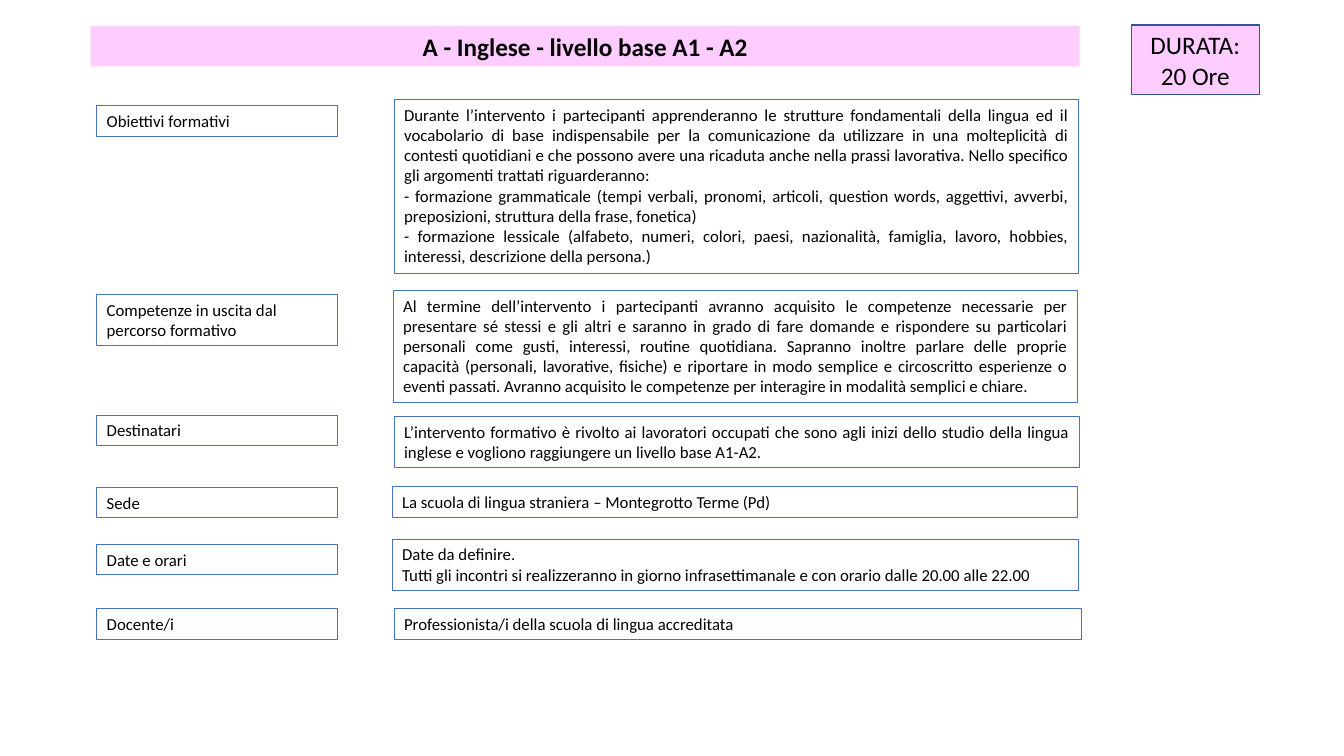
import dataclasses

import pptx
import pptx.dml.color
import pptx.enum.text
import pptx.enum.shapes
import pptx.util

PINK = pptx.dml.color.RGBColor(0xFF, 0xCC, 0xFF)
BLUE = pptx.dml.color.RGBColor(0x44, 0x72, 0xC4)
DARK_BLUE = pptx.dml.color.RGBColor(0x32, 0x54, 0x91)
BLACK = pptx.dml.color.RGBColor(0, 0, 0)
ALIGN = pptx.enum.text.PP_ALIGN
ANCHOR = pptx.enum.text.MSO_ANCHOR

SLIDE_WIDTH = pptx.util.Inches(13.33)
SLIDE_HEIGHT = pptx.util.Inches(7.5)
COLUMN = SLIDE_WIDTH / 100
ROW = SLIDE_HEIGHT / 100
LINE_ROWS = 2.7
PADDING_ROWS = 1.33
LABEL_LEFT = 7.2
LABEL_COLUMNS = 17.93


@dataclasses.dataclass
class Box:
    left: float
    top: float
    width: float
    height: float


@dataclasses.dataclass
class Section:
    label: str
    label_lines: int
    label_drop: float
    body: str
    body_lines: int
    body_left: float
    box_top: float
    box_width: float
    alignment: ALIGN = ALIGN.JUSTIFY


SECTIONS = [
    Section(
        "Obiettivi formativi", 1, 0.8,
        "Durante l’intervento i partecipanti apprenderanno le strutture fondamentali della lingua "
        "ed il vocabolario di base indispensabile per la comunicazione da utilizzare in una "
        "molteplicità di contesti quotidiani e che possono avere una ricaduta anche nella prassi "
        "lavorativa. Nello specifico gli argomenti trattati riguarderanno:\n"
        "- formazione grammaticale (tempi verbali, pronomi, articoli, question words, aggettivi, "
        "avverbi, preposizioni, struttura della frase, fonetica)\n"
        "- formazione lessicale (alfabeto, numeri, colori, paesi, nazionalità, famiglia, lavoro, "
        "hobbies, interessi, descrizione della persona.)",
        8, 22.13, 13.2, 73.07),
    Section(
        "Competenze in uscita dal percorso formativo", 2, 0.53,
        "Al termine dell’intervento i partecipanti avranno acquisito le competenze necessarie per "
        "presentare sé stessi e gli altri e saranno in grado di fare domande e rispondere su "
        "particolari personali come gusti, interessi, routine quotidiana. Sapranno inoltre parlare "
        "delle proprie capacità (personali, lavorative, fisiche) e riportare in modo semplice e "
        "circoscritto esperienze o eventi passati. Avranno acquisito le competenze per interagire "
        "in modalità semplici e chiare.",
        5, 22.06, 38.4, 73),
    Section(
        "Destinatari", 1, -0.14,
        "L’intervento formativo è rivolto ai lavoratori occupati che sono agli inizi dello studio "
        "della lingua inglese e vogliono raggiungere un livello base A1-A2.",
        2, 22.13, 55.07, 73.14),
    Section(
        "Sede", 1, 0.07,
        "La scuola di lingua straniera – Montegrotto Terme (Pd)",
        1, 21.98, 64.4, 73, ALIGN.LEFT),
    Section(
        "Date e orari", 1, 0.67,
        "Date da definire.\n"
        "Tutti gli incontri si realizzeranno in giorno infrasettimanale e con orario "
        "dalle 20.00 alle 22.00",
        2, 21.98, 71.33, 73.07, ALIGN.LEFT),
    Section(
        "Docente/i", 1, 0,
        "Professionista/i della scuola di lingua accreditata",
        1, 22.13, 80.53, 73.29, ALIGN.LEFT),
]


def text_rows(lines):
    return PADDING_ROWS + LINE_ROWS * lines


def place(shape, box):
    shape.left = round(box.left * COLUMN)
    shape.top = round(box.top * ROW)
    shape.width = round(box.width * COLUMN)
    shape.height = round(box.height * ROW)


def write(shape, text, size, alignment, anchor, bold=False):
    text_frame = shape.text_frame
    text_frame.text = text
    text_frame.word_wrap = True
    text_frame.auto_size = pptx.enum.text.MSO_AUTO_SIZE.NONE
    text_frame.vertical_anchor = anchor
    for paragraph in text_frame.paragraphs:
        paragraph.alignment = alignment
        for run in paragraph.runs:
            run.font.name = "Calibri"
            run.font.size = pptx.util.Pt(size)
            run.font.bold = bold
            run.font.color.rgb = BLACK


def add_rectangle(slide, box, line_color, line_width):
    shape = slide.shapes.add_shape(pptx.enum.shapes.MSO_SHAPE.RECTANGLE, 0, 0, 0, 0)
    place(shape, box)
    shape.shadow.inherit = False
    shape.fill.background()
    shape.line.color.rgb = line_color
    shape.line.width = pptx.util.Pt(line_width)
    return shape


def draw_title(slide, box):
    title = slide.shapes.title
    place(title, box)
    title.fill.solid()
    title.fill.fore_color.rgb = PINK
    write(title, "A - Inglese - livello base A1 - A2", 18, ALIGN.CENTER, ANCHOR.TOP, bold=True)


def draw_duration(slide, box):
    duration = add_rectangle(slide, box, DARK_BLUE, 1)
    duration.fill.solid()
    duration.fill.fore_color.rgb = PINK
    write(duration, "DURATA:\n20 Ore", 18, ALIGN.CENTER, ANCHOR.MIDDLE)


def draw_section(slide, box, section):
    label_box = Box(box.left, box.top + section.label_drop, LABEL_COLUMNS,
                    text_rows(section.label_lines))
    body_box = Box(box.left + section.body_left, box.top, box.width - section.body_left, box.height)
    label = add_rectangle(slide, label_box, BLUE, 0.75)
    write(label, section.label, 12, ALIGN.LEFT, ANCHOR.TOP)
    body = add_rectangle(slide, body_box, BLUE, 0.75)
    write(body, section.body, 12, section.alignment, ANCHOR.TOP)


def main():
    presentation = pptx.Presentation()
    presentation.slide_width = SLIDE_WIDTH
    presentation.slide_height = SLIDE_HEIGHT
    slide = presentation.slides.add_slide(presentation.slide_layouts.get_by_name("Title Only"))
    draw_title(slide, Box(6.75, 3.47, 73.59, 5.33))
    for section in SECTIONS:
        box = Box(LABEL_LEFT, section.box_top, section.box_width, text_rows(section.body_lines))
        draw_section(slide, box, section)
    draw_duration(slide, Box(84.17, 3.33, 9.53, 9.2))
    presentation.save("out.pptx")


if __name__ == "__main__":
    main()
